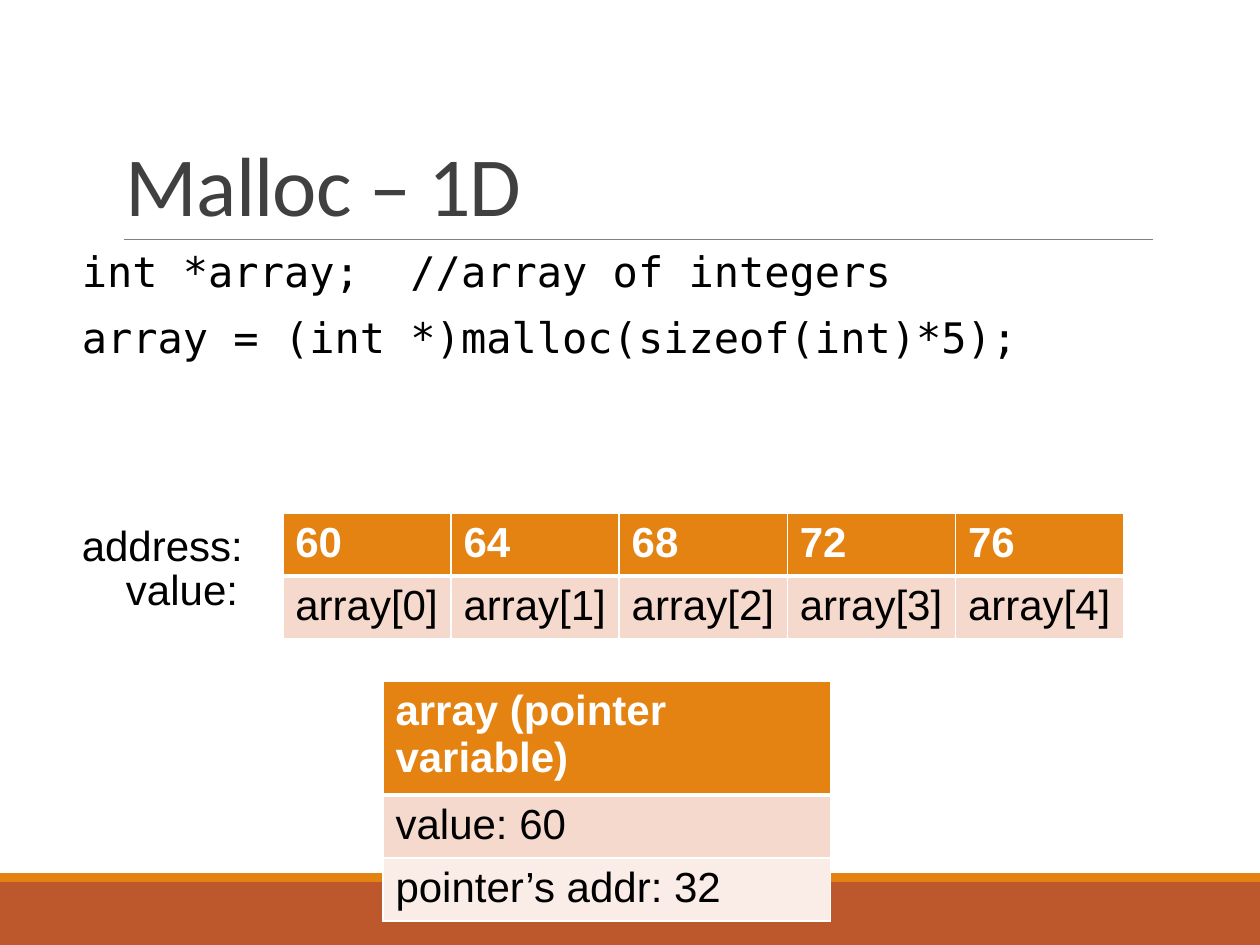
from dataclasses import dataclass

from lxml.etree import SubElement
from pptx import Presentation
from pptx.dml.color import RGBColor
from pptx.enum.shapes import MSO_CONNECTOR, MSO_SHAPE
from pptx.enum.text import MSO_ANCHOR
from pptx.oxml.ns import qn
from pptx.util import Cm, Pt


@dataclass(frozen=True)
class Theme:
    white: str = "FFFFFF"
    ink: str = "000000"
    title_ink: str = "404040"
    rule: str = "808080"
    orange: str = "E48312"
    rust: str = "BD582C"
    band_dark: str = "F5D9CC"
    band_light: str = "FAEDE7"
    title_font: str = "Calibri"
    body_font: str = "Arial"
    code_font: str = "DejaVu Sans Mono"
    title_size: int = 48
    body_size: int = 24


class SlideBuilder:
    def __init__(self, slide, theme):
        self.slide = slide
        self.theme = theme

    def format_run(self, run, color, **formats):
        values = {"name": self.theme.body_font, "size": Pt(self.theme.body_size),
                  "bold": False, **formats}
        for key, value in values.items():
            setattr(run.font, key, value)
        run.font.color.rgb = RGBColor.from_string(color)

    def bar(self, left, top, width, height, color):
        bar = self.slide.shapes.add_shape(
            MSO_SHAPE.RECTANGLE, Cm(left), Cm(top), Cm(width), Cm(height))
        bar.shadow.inherit = False
        bar.fill.solid()
        bar.fill.fore_color.rgb = RGBColor.from_string(color)
        bar.line.fill.background()

    def rule(self, left, right, y):
        rule = self.slide.shapes.add_connector(
            MSO_CONNECTOR.STRAIGHT, Cm(left), Cm(y), Cm(right), Cm(y))
        rule.line.color.rgb = RGBColor.from_string(self.theme.rule)
        rule.line.width = Pt(0.5)
        SubElement(rule._element.spPr, qn("a:effectLst"))

    def text(self, words, left, top, width, height=1.28, color=None,
             anchor=MSO_ANCHOR.TOP, **formats):
        frame = self.slide.shapes.add_textbox(
            Cm(left), Cm(top), Cm(width), Cm(height)).text_frame
        for key, value in {"word_wrap": True, "vertical_anchor": anchor}.items():
            setattr(frame, key, value)
        run = frame.paragraphs[0].add_run()
        run.text = words
        self.format_run(run, color or self.theme.ink, **formats)
        return frame.paragraphs[0]

    def title(self, words, left, top, width, height):
        heading = self.text(
            words, left, top, width, height, self.theme.title_ink, MSO_ANCHOR.BOTTOM,
            name=self.theme.title_font, size=Pt(self.theme.title_size))
        heading.line_spacing = 0.85
        heading.runs[0].font._element.set("spc", "-50")

    def borders(self, cell, widths):
        for side, points in zip("LRTB", widths):
            edge = SubElement(cell._tc.get_or_add_tcPr(), qn(f"a:ln{side}"),
                              w=str(Pt(points)))
            fill = SubElement(edge, qn("a:solidFill"))
            SubElement(fill, qn("a:srgbClr"), val=self.theme.white)

    def table(self, rows, left, top, column_width, row_height=1.03):
        theme = self.theme
        columns = len(rows[0])
        grid = self.slide.shapes.add_table(
            len(rows), columns, Cm(left), Cm(top),
            Cm(column_width * columns), Cm(row_height * len(rows))).table
        fills = [theme.orange, theme.band_dark, theme.band_light]
        for r, row in enumerate(rows):
            header = r == 0
            # A thick edge separates the header from the body
            widths = (1, 1, 3 if r == 1 else 1, 3 if header else 1)
            for c, words in enumerate(row):
                cell = grid.cell(r, c)
                self.borders(cell, widths)
                cell.fill.solid()
                cell.fill.fore_color.rgb = RGBColor.from_string(fills[r])
                run = cell.text_frame.paragraphs[0].add_run()
                run.text = words
                self.format_run(run, theme.white if header else theme.ink, bold=header)


def main():
    deck = Presentation()
    deck.slide_width, deck.slide_height = Cm(25.4), Cm(19.05)
    theme = Theme()
    builder = SlideBuilder(deck.slides.add_slide(deck.slide_layouts[6]), theme)

    # Footer bands and title
    builder.bar(0, 17.78, 25.4, 1.27, theme.rust)
    builder.bar(0, 17.6, 25.4, 0.18, theme.orange)
    builder.rule(2.49, 23.24, 4.83)
    builder.title("Malloc – 1D", 2.29, 0.79, 20.95, 4.04)

    # Code lines
    margin = 1.4
    builder.text("int *array;  //array of integers", margin, 4.83, 21.23,
                 name=theme.code_font)
    builder.text("array = (int *)malloc(sizeof(int)*5);", margin, 6.15, 23.24,
                 name=theme.code_font)

    # Array cells in memory, four bytes apart
    first_address, int_size, count = 60, 4, 5
    addresses = [str(first_address + int_size * i) for i in range(count)]
    elements = [f"array[{i}]" for i in range(count)]
    builder.table([addresses, elements], 5.7, 10.34, 3.39)
    builder.text("address:", margin, 10.34, 4.29)
    builder.text("value:", 2.29, 11.23, 4.29)

    # Pointer variable
    builder.table([["array (pointer variable)"], [f"value: {first_address}"],
                   ["pointer’s addr: 32"]], 7.72, 13.74, 9.02)

    deck.save("out.pptx")


if __name__ == "__main__":
    main()
